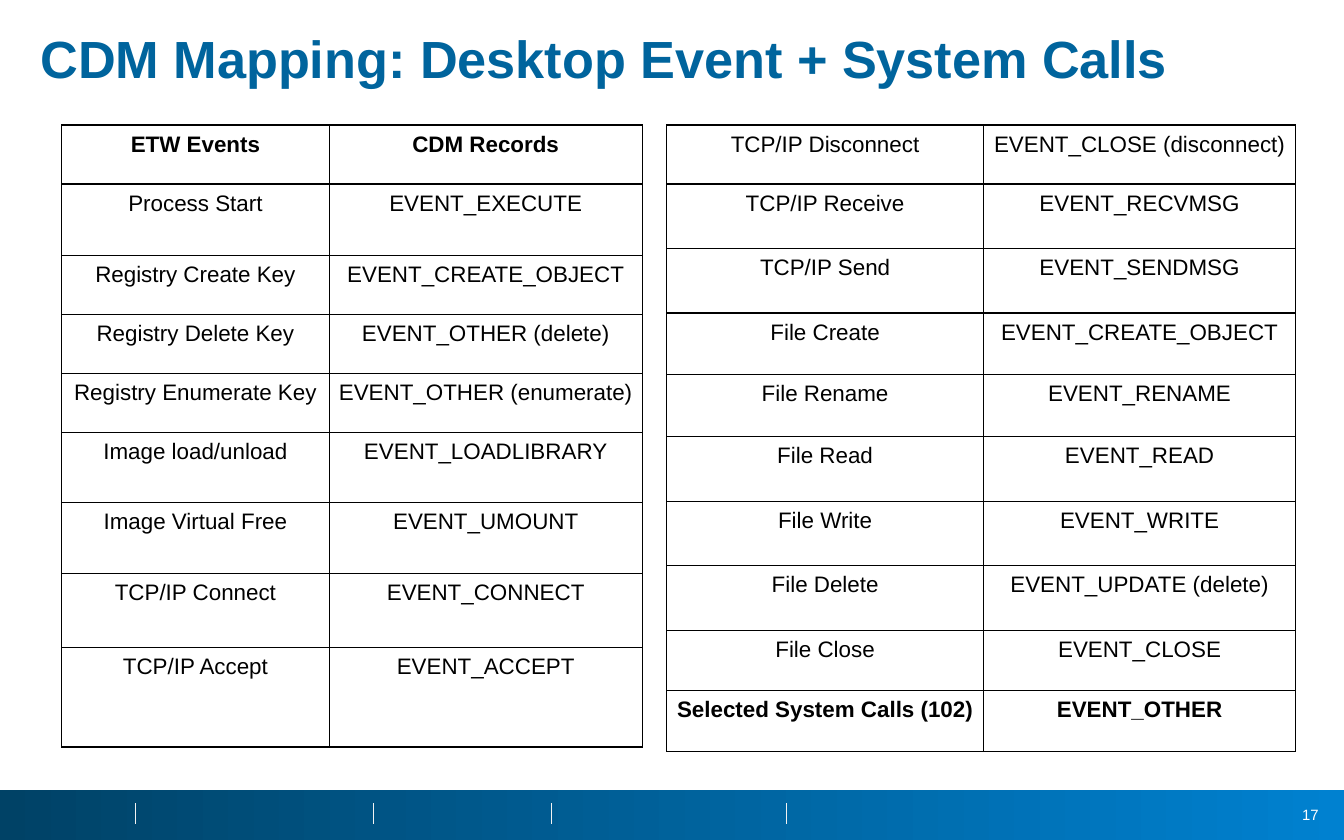
from lxml import etree
from pptx import Presentation
from pptx.dml.color import RGBColor
from pptx.enum.shapes import MSO_CONNECTOR, MSO_SHAPE
from pptx.enum.text import MSO_ANCHOR, PP_ALIGN
from pptx.oxml.ns import qn
from pptx.util import Inches, Pt

STRAIGHT = MSO_CONNECTOR.STRAIGHT
RECTANGLE = MSO_SHAPE.RECTANGLE
TOP, MIDDLE = MSO_ANCHOR.TOP, MSO_ANCHOR.MIDDLE
LEFT, CENTER, RIGHT = PP_ALIGN.LEFT, PP_ALIGN.CENTER, PP_ALIGN.RIGHT

NAVY = RGBColor(0x00, 0x42, 0x66)
BRIGHT_BLUE = RGBColor(0x00, 0x81, 0xD0)
TITLE_BLUE = RGBColor(0x00, 0x64, 0x9D)
BLACK = RGBColor(0x00, 0x00, 0x00)
WHITE = RGBColor(0xFF, 0xFF, 0xFF)
PALE_GREY = RGBColor(0xF2, 0xF2, 0xF2)

PAGE_WIDTH, PAGE_HEIGHT = 10, 6.25
FONT = "Arial"
CELL_MARGIN = Inches(0.05)
BORDER_WIDTH = Pt(0.75)
TABLE_TOP = 0.93

EVENT_ROWS = [
    ("ETW Events", "CDM Records"),
    ("Process Start", "EVENT_EXECUTE"),
    ("Registry Create Key", "EVENT_CREATE_OBJECT"),
    ("Registry Delete Key", "EVENT_OTHER (delete)"),
    ("Registry Enumerate Key", "EVENT_OTHER (enumerate)"),
    ("Image load/unload", "EVENT_LOADLIBRARY"),
    ("Image Virtual Free", "EVENT_UMOUNT"),
    ("TCP/IP Connect", "EVENT_CONNECT"),
    ("TCP/IP Accept", "EVENT_ACCEPT"),
]
EVENT_HEIGHTS = [0.44, 0.53, 0.44, 0.44, 0.44, 0.52, 0.53, 0.55, 0.74]

FILE_ROWS = [
    ("TCP/IP Disconnect", "EVENT_CLOSE (disconnect)"),
    ("TCP/IP Receive", "EVENT_RECVMSG"),
    ("TCP/IP Send", "EVENT_SENDMSG"),
    ("File Create", "EVENT_CREATE_OBJECT"),
    ("File Rename", "EVENT_RENAME"),
    ("File Read", "EVENT_READ"),
    ("File Write", "EVENT_WRITE"),
    ("File Delete", "EVENT_UPDATE (delete)"),
    ("File Close", "EVENT_CLOSE"),
    ("Selected System Calls (102)", "EVENT_OTHER"),
]
FILE_HEIGHTS = [0.44, 0.48, 0.48, 0.46, 0.46, 0.48, 0.48, 0.48, 0.45, 0.45]


def inches(*lengths):
    return [Inches(length) for length in lengths]


def write_text(text_frame, text, size, color, align, bold=False):
    text_frame.text = text
    para = text_frame.paragraphs[0]
    para.alignment = align
    font = para.runs[0].font
    font.name, font.size, font.bold = FONT, Pt(size), bold
    font.color.rgb = color
    return para


def place_title(page, box, text):
    title = page.shapes.title
    title.left, title.top, title.width, title.height = inches(*box)
    frame = title.text_frame
    frame.vertical_anchor = TOP
    frame.word_wrap = True
    para = write_text(frame, text, 28, TITLE_BLUE, LEFT, bold=True)
    para.line_spacing = 0.9


def add_footer(page, box):
    """Draw the gradient band with its separators and page number."""
    left, top, width, height = box
    band = page.shapes.add_shape(RECTANGLE, *inches(*box))
    band.shadow.inherit = False
    band.line.fill.background()
    band.fill.gradient()
    band.fill.gradient_angle = 0
    for stop, color, position in zip(band.fill.gradient_stops, (NAVY, BRIGHT_BLUE), (0, 1)):
        stop.color.rgb = color
        stop.position = position

    for share in (0.101, 0.278, 0.41, 0.585):
        x = left + share * width
        separator = page.shapes.add_connector(
            STRAIGHT, *inches(x, top + 0.27 * height, x, top + 0.69 * height))
        separator.line.color.rgb = PALE_GREY
        separator.line.width = Pt(0.25)
        etree.SubElement(separator._element.spPr, qn("a:effectLst"))

    number = page.shapes.add_textbox(
        *inches(left + 0.949 * width, top + 0.19 * height, 0.042 * width, 0.63 * height))
    number.text_frame.word_wrap = True
    number.text_frame.vertical_anchor = MIDDLE
    write_text(number.text_frame, "17", 8, WHITE, RIGHT)


def add_borders(cell):
    properties = cell._tc.get_or_add_tcPr()
    for side in ("lnL", "lnR", "lnT", "lnB"):
        line = etree.SubElement(properties, qn(f"a:{side}"), w=str(BORDER_WIDTH))
        fill = etree.SubElement(line, qn("a:solidFill"))
        etree.SubElement(fill, qn("a:srgbClr"), val=str(BLACK))


def add_mapping_table(page, left, top, widths, heights, rows, bold_row):
    """Add a bordered table of event and record pairs, with one row in bold."""
    table = page.shapes.add_table(
        len(rows), len(widths), *inches(left, top, sum(widths), sum(heights))).table
    table.first_row = False
    table.horz_banding = False
    for column, width in zip(table.columns, widths):
        column.width = Inches(width)
    for row, height in zip(table.rows, heights):
        row.height = Inches(height)

    for row_index, texts in enumerate(rows):
        for column_index, text in enumerate(texts):
            cell = table.cell(row_index, column_index)
            cell.margin_left = cell.margin_right = CELL_MARGIN
            cell.margin_top = cell.margin_bottom = CELL_MARGIN
            add_borders(cell)
            cell.fill.background()
            write_text(cell.text_frame, text, 12, BLACK, CENTER, bold=row_index == bold_row)


def main():
    deck = Presentation()
    deck.slide_width, deck.slide_height = inches(PAGE_WIDTH, PAGE_HEIGHT)
    page = deck.slides.add_slide(deck.slide_layouts.get_by_name("Title Only"))

    add_footer(page, (0, 0.94 * PAGE_HEIGHT, PAGE_WIDTH, 0.06 * PAGE_HEIGHT))
    place_title(page, (0.2, 0.2, 9.59, 0.36), "CDM Mapping: Desktop Event + System Calls")
    add_mapping_table(page, 0.46, TABLE_TOP, (1.99, 2.33), EVENT_HEIGHTS, EVENT_ROWS,
                      bold_row=0)
    add_mapping_table(page, 4.96, TABLE_TOP, (2.36, 2.32), FILE_HEIGHTS, FILE_ROWS,
                      bold_row=len(FILE_ROWS) - 1)
    deck.save("out.pptx")


if __name__ == "__main__":
    main()
